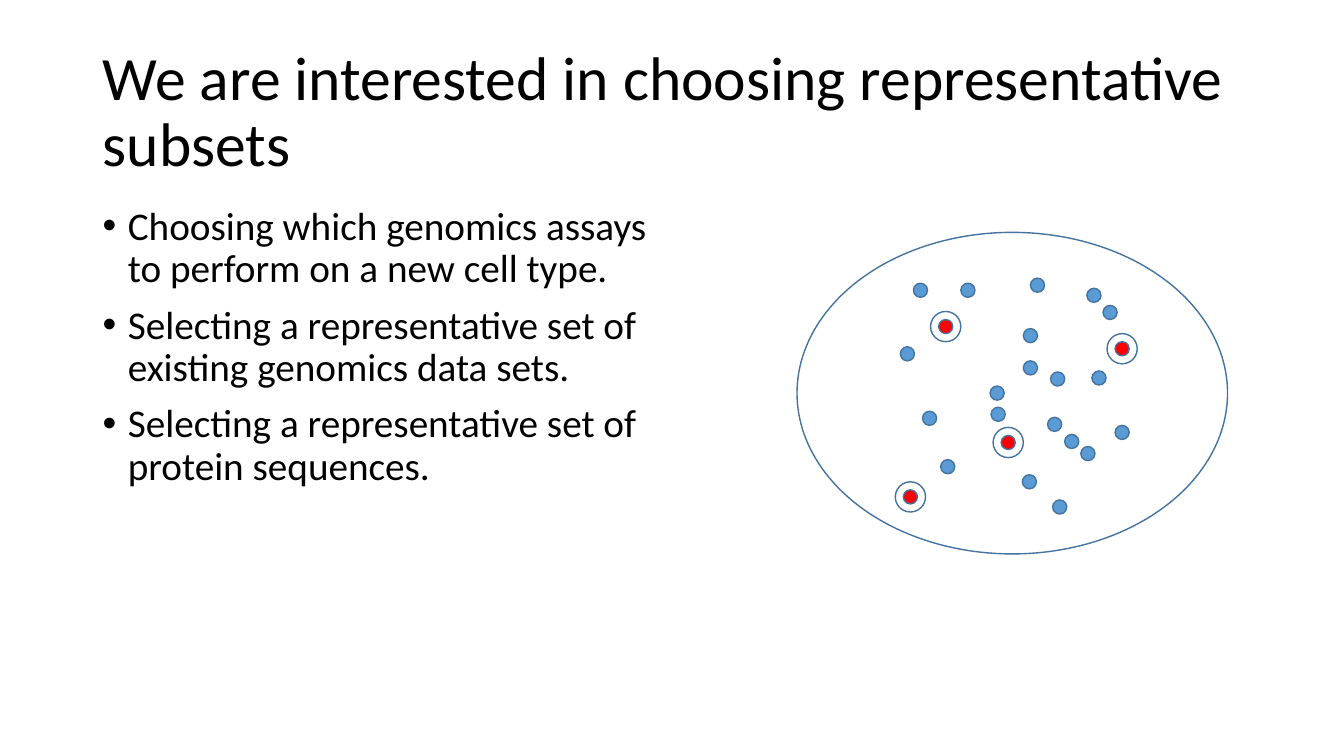
from lxml import etree
from pptx import Presentation
from pptx.dml.color import RGBColor
from pptx.enum.shapes import MSO_SHAPE
from pptx.enum.text import MSO_ANCHOR
from pptx.oxml.ns import qn
from pptx.util import Pt

PX = 9144  # EMU per px, 100 px to the inch
OVAL = MSO_SHAPE.OVAL
MIDDLE, TOP = MSO_ANCHOR.MIDDLE, MSO_ANCHOR.TOP

FONT = "Calibri"
COLORS = {"text": "000000", "item": "5B9BD5", "chosen": "FF0000", "outline": "43739E"}
DOT, RING = 14, 30
INDENT = 25

TITLE = "We are interested in choosing representative subsets"
EXAMPLES = [
    "Choosing which genomics assays to perform on a new cell type.",
    "Selecting a representative set of existing genomics data sets.",
    "Selecting a representative set of protein sequences.",
]

# Centres of the points in the ground set
ITEMS = [
    (913, 288), (960, 288), (922, 415), (900, 351), (990, 411),
    (1022, 333), (1022, 365), (1046, 421), (1063, 438), (1021, 478),
    (1113, 429), (1051, 503), (940, 463), (1029, 283), (1085, 293),
    (1101, 310), (1090, 375), (1049, 376), (989, 390), (1079, 450),
]
REPRESENTATIVES = [(1000, 439), (903, 493), (938, 324), (1113, 346)]


def rgb(name):
    return RGBColor.from_string(COLORS[name])


def add_bullet(paragraph):
    properties = paragraph._p.get_or_add_pPr()
    properties.set("marL", str(INDENT * PX))
    properties.set("indent", str(-INDENT * PX))
    etree.SubElement(properties, qn("a:buFont"), typeface="Arial")
    etree.SubElement(properties, qn("a:buChar"), char="•")


def add_text(slide, box, lines, size, anchor, bulleted=False):
    frame = slide.shapes.add_textbox(*(n * PX for n in box)).text_frame
    frame.word_wrap = True
    frame.vertical_anchor = anchor
    for i, line in enumerate(lines):
        paragraph = frame.add_paragraph() if i else frame.paragraphs[0]
        paragraph.text = line
        if bulleted:
            add_bullet(paragraph)
        paragraph.line_spacing = 0.9
        if i:
            paragraph.space_before = Pt(10)
        paragraph.font.name = FONT
        paragraph.font.size = Pt(size)
        paragraph.font.color.rgb = rgb("text")


def add_ellipse(shapes, center, width, height, fill=None):
    x, y = center
    left, top = round((x - width / 2) * PX), round((y - height / 2) * PX)
    ellipse = shapes.add_shape(OVAL, left, top, width * PX, height * PX)
    ellipse.shadow.inherit = False
    if fill:
        ellipse.fill.solid()
        ellipse.fill.fore_color.rgb = rgb(fill)
    else:
        ellipse.fill.background()
    ellipse.line.color.rgb = rgb("outline")
    ellipse.line.width = Pt(1)


def add_representative(slide, center):
    group = slide.shapes.add_group_shape()
    add_ellipse(group.shapes, center, DOT, DOT, "chosen")
    add_ellipse(group.shapes, center, RING, RING)


def main():
    prs = Presentation()
    prs.slide_width, prs.slide_height = 1333 * PX, 750 * PX
    slide = prs.slides.add_slide(prs.slide_layouts[6])

    # Title and examples
    add_text(slide, (92, 40, 1150, 145), [TITLE], 44, MIDDLE)
    add_text(slide, (92, 200, 589, 476), EXAMPLES, 28, TOP, bulleted=True)

    # Ground set with its representative subset
    for center in ITEMS:
        add_ellipse(slide.shapes, center, DOT, DOT, "item")
    add_ellipse(slide.shapes, (1004, 390), 427, 319)
    for center in REPRESENTATIVES:
        add_representative(slide, center)

    prs.save("out.pptx")


if __name__ == "__main__":
    main()
